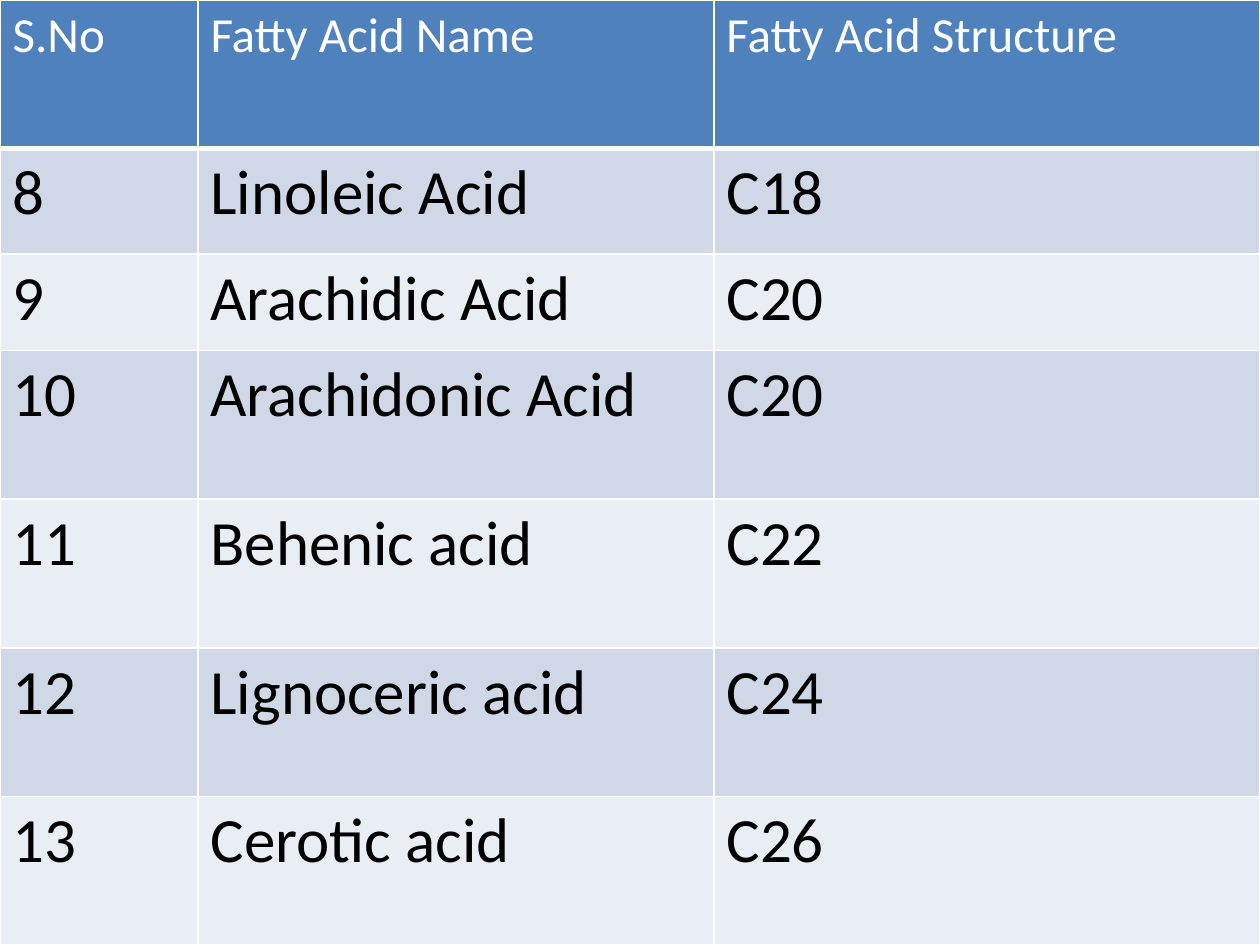
from lxml import etree
from pptx import Presentation
from pptx.dml.color import RGBColor
from pptx.enum.text import MSO_ANCHOR, PP_ALIGN
from pptx.oxml.ns import qn
from pptx.util import Cm, Pt

TOP, LEFT = MSO_ANCHOR.TOP, PP_ALIGN.LEFT

WHITE = RGBColor(0xFF, 0xFF, 0xFF)
BLACK = RGBColor(0x00, 0x00, 0x00)
BLUE = RGBColor(0x4F, 0x81, 0xBD)
DARK_BAND = RGBColor(0xD0, 0xD8, 0xE8)
LIGHT_BAND = RGBColor(0xE9, 0xED, 0xF4)

# Content
HEADINGS = ("S.No", "Fatty Acid Name", "Fatty Acid Structure")
FATTY_ACIDS = [
    ("8", "Linoleic Acid", "C18"),
    ("9", "Arachidic Acid", "C20"),
    ("10", "Arachidonic Acid", "C20"),
    ("11", "Behenic acid", "C22"),
    ("12", "Lignoceric acid", "C24"),
    ("13", "Cerotic acid", "C26"),
]

# Measures in cm; rows not listed share the remaining height
WIDTH, HEIGHT = 25.4, 19.05
COLUMN_WIDTHS = (3.99, 10.4, 11.01)
SHORT_ROWS = {1: 2.12, 2: 1.95}

HEADING_FONT = {"name": "Calibri", "size": Pt(28), "bold": False}
BODY_FONT = {"name": "Calibri", "size": Pt(36), "bold": False}


def set_borders(cell, widths):
    """Draw white cell borders; widths maps each side to points."""
    properties = cell._tc.get_or_add_tcPr()
    for side, points in widths.items():
        line = etree.SubElement(properties, qn(f"a:ln{side}"), w=str(Pt(points)))
        fill = etree.SubElement(line, qn("a:solidFill"))
        etree.SubElement(fill, qn("a:srgbClr"), val=str(WHITE))


def fill_cell(cell, text, font, color, background, borders):
    set_borders(cell, borders)
    cell.fill.solid()
    cell.fill.fore_color.rgb = background
    cell.vertical_anchor = TOP
    paragraph = cell.text_frame.paragraphs[0]
    paragraph.alignment = LEFT
    run = paragraph.add_run()
    run.text = text
    for attribute, value in font.items():
        setattr(run.font, attribute, value)
    run.font.color.rgb = color


def main():
    deck = Presentation()
    deck.slide_width, deck.slide_height = Cm(WIDTH), Cm(HEIGHT)
    slide = deck.slides.add_slide(deck.slide_layouts[6])

    # Table grid
    rows = [HEADINGS, *FATTY_ACIDS]
    acids = slide.shapes.add_table(
        len(rows), len(HEADINGS), 0, 0, Cm(WIDTH), Cm(HEIGHT)).table
    for column, width in zip(acids.columns, COLUMN_WIDTHS):
        column.width = Cm(width)
    tall_row = (HEIGHT - sum(SHORT_ROWS.values())) / (len(rows) - len(SHORT_ROWS))
    for number, row in enumerate(acids.rows):
        row.height = Cm(SHORT_ROWS.get(number, tall_row))

    # Heading row, then alternating bands
    thin = dict.fromkeys("LRTB", 1)
    for number, entries in enumerate(rows):
        if number == 0:
            look = (HEADING_FONT, WHITE, BLUE, {**thin, "B": 3})
        else:
            band = DARK_BAND if number % 2 else LIGHT_BAND
            look = (BODY_FONT, BLACK, band, thin)
        for position, text in enumerate(entries):
            fill_cell(acids.cell(number, position), text, *look)

    deck.save("out.pptx")


if __name__ == "__main__":
    main()
